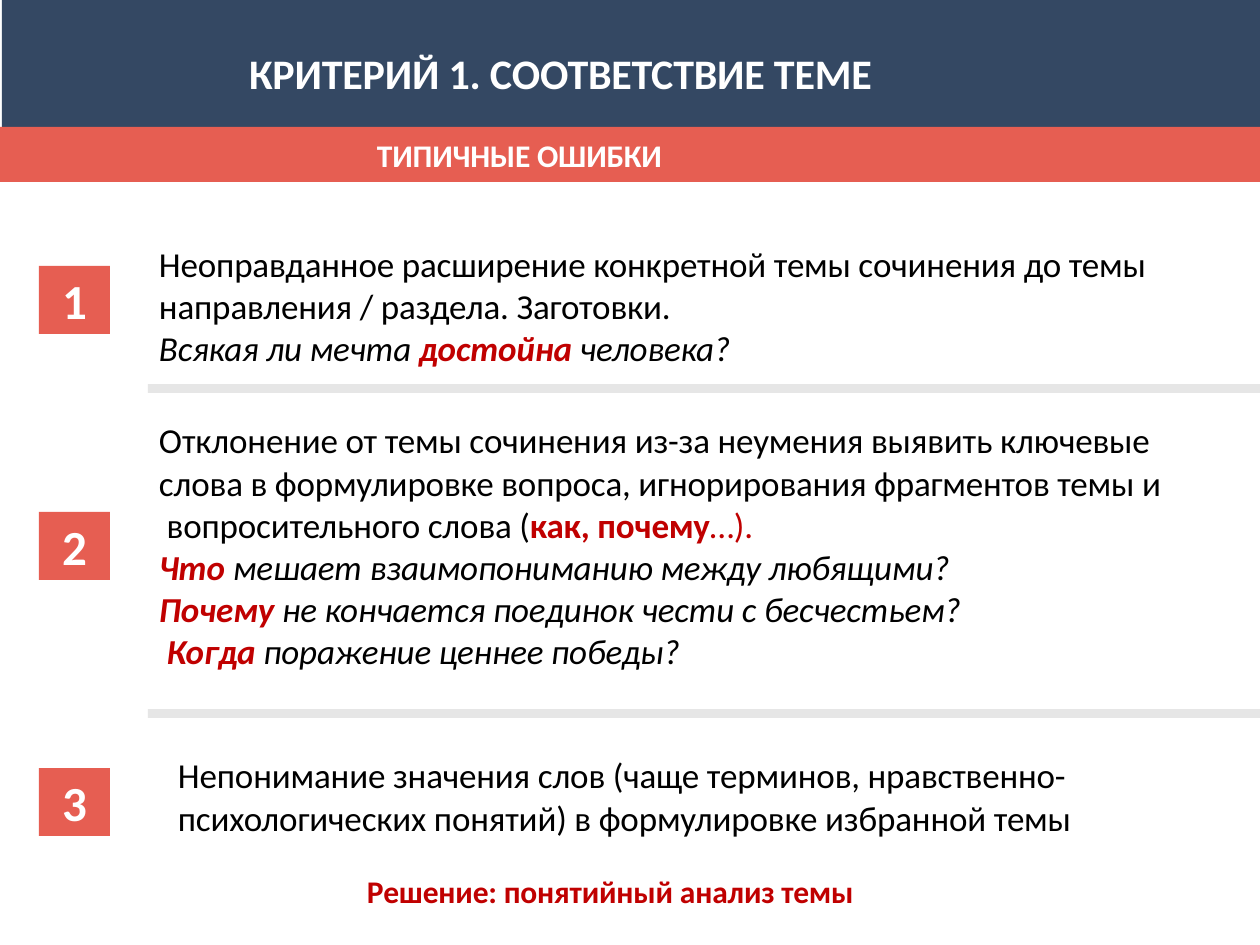
"""Build the slide on typical mistakes against the first essay criterion."""
from pptx import Presentation
from pptx.dml.color import RGBColor
from pptx.enum.shapes import MSO_SHAPE
from pptx.enum.text import MSO_ANCHOR, MSO_AUTO_SIZE, PP_ALIGN
from pptx.util import Pt
from lxml.etree import SubElement
from pptx.oxml.ns import qn

PX = 914400 / 126
NAVY, CORAL, GREY = "344863", "E65E52", "E6E6E6"
WHITE, BLACK, RED = "FFFFFF", "000000", "C00000"

PLAIN = (BLACK, False, False)
ITALIC = (BLACK, False, True)
KEYWORD = (RED, True, True)
STRONG = (RED, True, False)
LIGHT = (WHITE, True, False)


def add_block(left, top, width, height, color):
    block = slide.shapes.add_shape(
        MSO_SHAPE.RECTANGLE, *(round(n * PX) for n in (left, top, width, height)))
    block.shadow.inherit = False
    block.fill.solid()
    block.fill.fore_color.rgb = RGBColor.from_string(color)
    block.line.fill.background()
    return block


def write(shape, paragraphs, size, inset=(0, 0), align=PP_ALIGN.LEFT,
          anchor=MSO_ANCHOR.TOP, spacing=-10):
    frame = shape.text_frame
    frame.word_wrap = True
    frame.auto_size = MSO_AUTO_SIZE.NONE
    frame.vertical_anchor = anchor
    frame.margin_left, frame.margin_top = (round(n * PX) for n in inset)
    frame.margin_right = frame.margin_bottom = 0
    for index, lines in enumerate(paragraphs):
        paragraph = frame.paragraphs[0] if index == 0 else frame.add_paragraph()
        paragraph.alignment = align
        paragraph.line_spacing = 1.0
        paragraph.space_before = Pt(0)
        properties = paragraph._p.get_or_add_pPr()
        properties.set("marL", "0")
        properties.set("indent", "0")
        SubElement(properties, qn("a:buNone"))
        for number, line in enumerate(lines):
            if number:
                paragraph.add_line_break()
            for text, (color, bold, italic) in line:
                run = paragraph.add_run()
                run.text = text
                run.font.name = "Calibri"
                run.font.size = Pt(size)
                run.font.bold = bold
                run.font.italic = italic
                run.font.color.rgb = RGBColor.from_string(color)
                run._r.get_or_add_rPr().set("spc", str(spacing))


prs = Presentation()
prs.slide_width, prs.slide_height = round(1260 * PX), round(945 * PX)
slide = prs.slides.add_slide(prs.slide_layouts[4])

add_block(2, 0, 1258, 127, NAVY)
subtitle = add_block(0, 127, 1260, 55, CORAL)
write(subtitle, [[[("ТИПИЧНЫЕ ОШИБКИ", LIGHT)]]], 18, inset=(377, 9))

for number, top in enumerate((266, 512, 768), start=1):
    badge = add_block(39, top, 71, 68, CORAL)
    write(badge, [[[(str(number), LIGHT)]]], 28, align=PP_ALIGN.CENTER,
          anchor=MSO_ANCHOR.MIDDLE, spacing=0)

for top in (384, 709):
    add_block(148, top, 1112, 9, GREY)

title = slide.shapes.title
title.left, title.top, title.width, title.height = (
    round(n * PX) for n in (0, 0, 1260, 98))
slide.shapes._spTree.append(title._element)
write(title, [[[("КРИТЕРИЙ 1. СООТВЕТСТВИЕ ТЕМЕ", LIGHT)]]], 24,
      inset=(249, 0), anchor=MSO_ANCHOR.BOTTOM)

expansion = [
    [[("Неоправданное расширение конкретной темы сочинения до темы", PLAIN)]],
    [[("направления / раздела. Заготовки.", PLAIN)]],
    [[("Всякая ли мечта ", ITALIC), ("достойна ", KEYWORD), ("человека?", ITALIC)]],
]
deviation = [
    [
        [("Отклонение от темы сочинения из-за неумения выявить ключевые", PLAIN)],
        [("слова в формулировке вопроса, игнорирования фрагментов темы и", PLAIN)],
        [(" вопросительного слова (", PLAIN), ("как, почему", STRONG),
         ("…).", (RED, False, False))],
    ],
    [
        [("Что ", KEYWORD), ("мешает взаимопониманию между любящими?", ITALIC)],
        [("Почему ", KEYWORD), ("не кончается поединок чести с бесчестьем?", ITALIC)],
        [(" Когда ", KEYWORD), ("поражение ценнее победы?", ITALIC)],
    ],
]
misreading = [
    [[("Непонимание значения слов (чаще терминов, нравственно-", PLAIN)]],
    [[("психологических понятий) в формулировке избранной темы", PLAIN)]],
]
solution = [[[("Решение: понятийный анализ темы", STRONG)]]]

bodies = [
    (1, (158, 239, 1020, 130), expansion, 20),
    (2, (158, 416, 1030, 256), deviation, 20),
    (3, (177, 751, 920, 87), misreading, 20),
    (4, (366, 869, 510, 42), solution, 18),
]
for idx, box, paragraphs, size in bodies:
    body = slide.placeholders[idx]
    body.left, body.top, body.width, body.height = (round(n * PX) for n in box)
    slide.shapes._spTree.append(body._element)
    write(body, paragraphs, size, inset=(1, 3))

prs.save("out.pptx")
